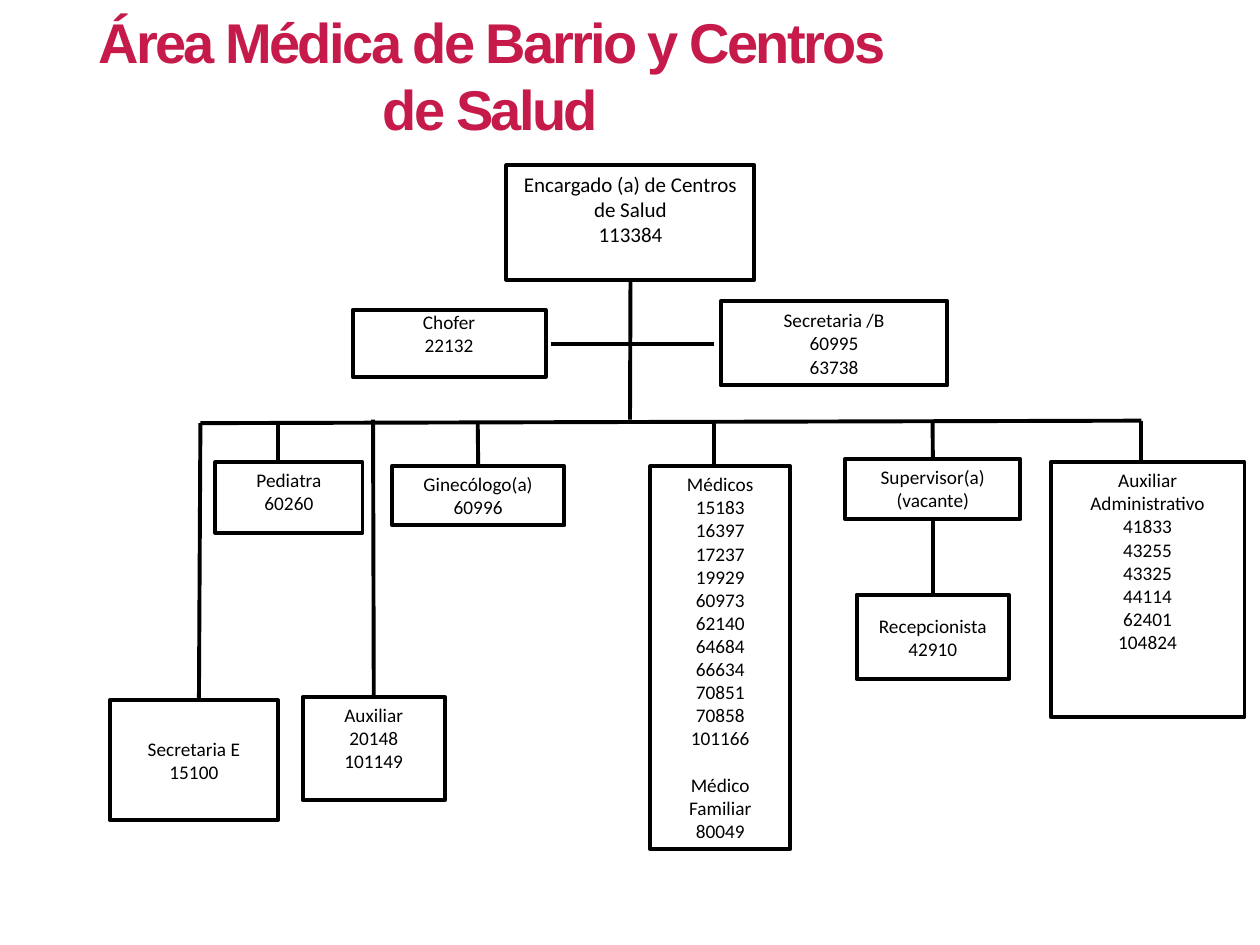
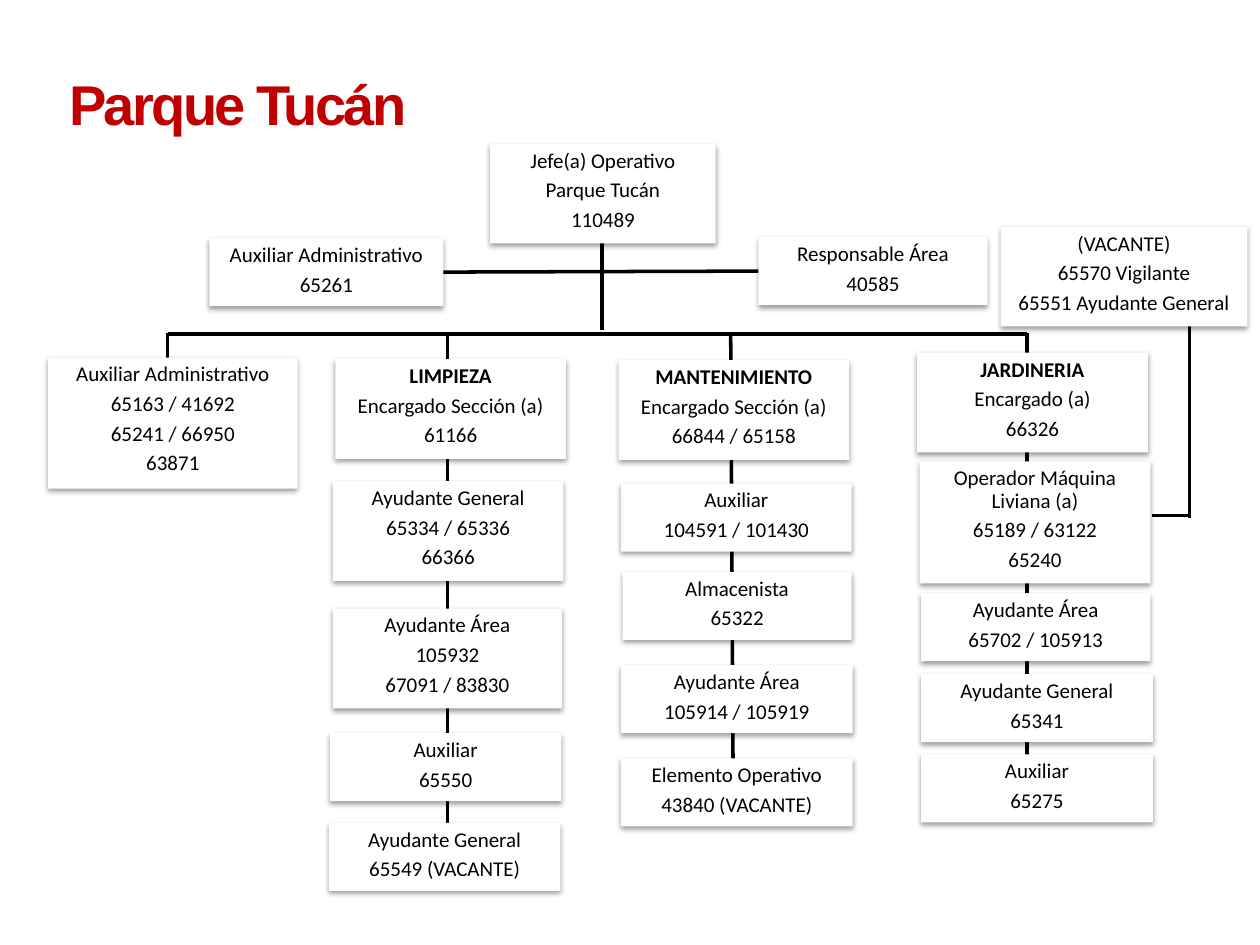
"""Build two organisation charts: neighbourhood health centres and a park."""

from lxml.etree import SubElement
from pptx import Presentation
from pptx.dml.color import RGBColor
from pptx.enum.shapes import MSO_CONNECTOR as Connector
from pptx.enum.shapes import MSO_SHAPE as Preset
from pptx.enum.text import MSO_ANCHOR as Anchor
from pptx.enum.text import MSO_AUTO_SIZE as AutoSize
from pptx.enum.text import PP_ALIGN as Align
from pptx.oxml.ns import qn
from pptx.util import Cm, Pt

COLORS = {
    "crimson": "C51A4A",
    "red": "C00000",
    "black": "000000",
    "white": "FFFFFF",
}
TITLE_FONT = {"name": "Arial", "size": Pt(32), "bold": True}
SECTIONS = ("LIMPIEZA", "MANTENIMIENTO", "JARDINERIA")
TOP, LEFT, BOTTOM, RIGHT = range(4)
CARD_HEIGHTS = {2: 1.37, 3: 2.01, 4: 2.64}
CARD_SPACING = {"line_spacing": 0.9, "space_after": Pt(4)}

HEALTH_BOXES = {
    "head": (10.21, 3.33, 5, 2.31, ["Encargado (a) de Centros de Salud", "113384"]),
    "driver": (7.11, 6.25, 3.89, 1.35, ["Chofer", "22132"]),
    "secretary_b": (14.53, 6.07, 4.57, 1.7, ["Secretaria /B", "60995", "63738"]),
    "pediatrician": (4.34, 9.32, 2.97, 1.42, ["Pediatra", "60260"]),
    "gynecologist": (7.9, 9.4, 3.48, 1.19, ["Ginecólogo(a)", "60996"]),
    "doctors": (13.11, 9.4, 2.82, 7.72, [
        "Médicos", "15183", "16397", "17237", "19929", "60973", "62140",
        "64684", "66634", "70851", "70858", "101166",
        "Médico", "Familiar", "80049"]),
    "supervisor": (17.04, 9.25, 3.53, 1.22, ["Supervisor(a)", "(vacante)"]),
    "receptionist": (17.27, 11.99, 3.07, 1.7, ["Recepcionista", "42910"]),
    "administrative": (21.18, 9.32, 3.91, 5.13, [
        "Auxiliar Administrativo", "41833", "43255", "43325", "44114",
        "62401", "104824"]),
    "secretary_e": (2.21, 14.12, 3.4, 2.41, ["Secretaria E", "15100"]),
    "assistant": (6.1, 14.05, 2.87, 2.08, ["Auxiliar", "20148", "101149"]),
}
MIDDLE_BOXES = ("secretary_b", "receptionist", "secretary_e")
HEALTH_LINES = [
    (5.61, 8.48, 5.61, 9.3),
    (14.4, 8.46, 14.4, 9.4),
    (23.01, 8.48, 23.01, 9.3),
    (12.7, 6.93, 14.4, 6.93),
    (11.1, 6.93, 12.8, 6.93),
    (4.04, 8.53, 23.01, 8.48),
    (4.04, 8.53, 4.01, 14.12),
]
HEALTH_JOINED_LINES = [
    ((12.7, 5.64, 12.7, 8.46), ("head", BOTTOM), None),
    ((9.63, 8.51, 9.63, 9.4), None, ("gynecologist", TOP)),
    ((18.8, 8.48, 18.8, 9.25), None, ("supervisor", TOP)),
    ((7.52, 8.46, 7.52, 14.05), None, ("assistant", TOP)),
    ((18.8, 10.47, 18.8, 11.99), ("supervisor", BOTTOM), ("receptionist", TOP)),
]

PARK_CARDS = {
    "head": (9.88, 2.9, 4.55, ["Jefe(a) Operativo", "Parque Tucán", "110489"]),
    "administrative": (4.22, 4.8, 4.72, ["Auxiliar Administrativo", "65261"]),
    "area_manager": (15.29, 4.78, 4.62, ["Responsable Área", "40585"]),
    "vacant": (20.17, 4.57, 4.98, [
        "(VACANTE)", "65570 Vigilante", "65551 Ayudante General"]),
    "administrative_team": (0.97, 7.21, 5.03, [
        "Auxiliar Administrativo", "65163 / 41692", "65241 / 66950", "63871"]),
    "cleaning": (6.76, 7.24, 4.65, ["LIMPIEZA", "Encargado Sección (a)", "61166"]),
    "cleaning_general": (6.71, 9.7, 4.65, [
        "Ayudante General", "65334 / 65336", "66366"]),
    "cleaning_area": (6.71, 12.27, 4.62, [
        "Ayudante Área", "105932", "67091 / 83830"]),
    "cleaning_assistant": (6.65, 14.78, 4.67, ["Auxiliar", "65550"]),
    "cleaning_vacant": (6.63, 16.59, 4.67, ["Ayudante General", "65549 (VACANTE)"]),
    "maintenance": (12.47, 7.26, 4.65, [
        "MANTENIMIENTO", "Encargado Sección (a)", "66844 / 65158"]),
    "maintenance_assistant": (12.52, 9.75, 4.65, ["Auxiliar", "104591 / 101430"]),
    "storekeeper": (12.55, 11.53, 4.62, ["Almacenista", "65322"]),
    "maintenance_area": (12.52, 13.41, 4.67, ["Ayudante Área", "105914 / 105919"]),
    "operative": (12.52, 15.29, 4.67, ["Elemento Operativo", "43840 (VACANTE)"]),
    "gardening": (18.49, 7.11, 4.65, ["JARDINERIA", "Encargado (a)", "66326"]),
    "machine_operator": (18.54, 9.3, 4.65, [
        "Operador Máquina Liviana (a)", "65189 / 63122", "65240"]),
    "gardening_area": (18.57, 11.96, 4.62, ["Ayudante Área", "65702 / 105913"]),
    "gardening_general": (18.57, 13.59, 4.67, ["Ayudante General", "65341"]),
    "gardening_assistant": (18.57, 15.21, 4.67, ["Auxiliar", "65275"]),
}
PARK_LINES = [
    (9.02, 16.66, 9.02, 6.76),
    (14.78, 15.9, 14.73, 6.76),
    (12.14, 6.65, 12.14, 4.5),
    (3.38, 6.73, 20.7, 6.73),
    (3.38, 7.62, 3.38, 6.71),
    (20.7, 15.21, 20.7, 6.71),
    (23.22, 10.39, 23.98, 10.39),
    (23.98, 10.44, 23.98, 6.12),
]


def color(name):
    """Return the named colour."""
    return RGBColor.from_string(COLORS[name])


def apply_format(target, values):
    """Set each attribute given in a dict of format values."""
    for attribute, value in values.items():
        setattr(target, attribute, value)


def add_title(slide, text, box, color_name, alignment):
    """Place and format the slide title."""
    title = slide.shapes.title
    apply_format(title, dict(zip(("left", "top", "width", "height"), map(Cm, box))))
    frame = title.text_frame
    apply_format(frame, {"word_wrap": True, "auto_size": AutoSize.NONE,
                         "vertical_anchor": Anchor.MIDDLE})
    paragraph = frame.paragraphs[0]
    paragraph.alignment = alignment
    run = paragraph.add_run()
    run.text = text
    apply_format(run.font, TITLE_FONT)
    run.font.color.rgb = color(color_name)
    run.font._element.set("spc", "-150")


def add_box(slide, box, lines, size, anchor=Anchor.TOP, spacing=None):
    """Add a plain rectangle holding centred lines of text."""
    shape = slide.shapes.add_shape(Preset.RECTANGLE, *map(Cm, box))
    shape.shadow.inherit = False
    frame = shape.text_frame
    apply_format(frame, {"word_wrap": True, "vertical_anchor": anchor})
    for index, text in enumerate(lines):
        paragraph = frame.add_paragraph() if index else frame.paragraphs[0]
        apply_format(paragraph, {"alignment": Align.CENTER, **(spacing or {})})
        run = paragraph.add_run()
        run.text = text
        apply_format(run.font, {"name": "Calibri", "size": Pt(size),
                                "bold": text in SECTIONS})
        run.font.color.rgb = color("black")
    return shape


def add_outlined_box(slide, box, lines, size, anchor):
    """Add an unfilled box with a black outline."""
    shape = add_box(slide, box, lines, size, anchor)
    shape.fill.background()
    shape.line.color.rgb = color("black")
    shape.line.width = Pt(2.25)
    return shape


def add_card(slide, box, lines):
    """Add a white card with a soft shadow below it."""
    shape = add_box(slide, box, lines, 12, spacing=CARD_SPACING)
    shape.fill.solid()
    shape.fill.fore_color.rgb = color("white")
    shape.line.fill.background()
    effects = shape._element.spPr.find(qn("a:effectLst"))
    shadow = SubElement(effects, qn("a:outerShdw"), blurRad=str(Pt(3.1)),
                        dist=str(Pt(1.6)), dir="5400000", rotWithShape="0")
    shade = SubElement(shadow, qn("a:srgbClr"), val=COLORS["black"])
    SubElement(shade, qn("a:alpha"), val="38000")
    return shape


def add_line(slide, ends, width):
    """Add a straight black line."""
    line = slide.shapes.add_connector(Connector.STRAIGHT, *map(Cm, ends))
    line.line.color.rgb = color("black")
    line.line.width = Pt(width)
    SubElement(line._element.spPr, qn("a:effectLst"))
    return line


def add_joined_line(slide, ends, width, shapes, begin, end):
    """Add a line joined to the middle of the sides of boxes."""
    line = add_line(slide, ends, width)
    if begin:
        line.begin_connect(shapes[begin[0]], begin[1])
    if end:
        line.end_connect(shapes[end[0]], end[1])


def build_health_slide(slide):
    """Draw the chart of the health centres."""
    add_title(slide, "Área Médica de Barrio y Centros de Salud",
              (1.24, 0, 17.3, 3), "crimson", Align.CENTER)
    for ends in HEALTH_LINES:
        add_line(slide, ends, 2.25)
    shapes = {}
    for name, (*box, lines) in HEALTH_BOXES.items():
        anchor = Anchor.MIDDLE if name in MIDDLE_BOXES else Anchor.TOP
        size = 12 if name == "head" else 11
        shapes[name] = add_outlined_box(slide, box, lines, size, anchor)
    shapes["driver"].text_frame.margin_top = 0
    family_doctor = shapes["doctors"].text_frame.paragraphs[-3]
    family_doctor.space_before = Pt(13.4)
    for ends, begin, end in HEALTH_JOINED_LINES:
        add_joined_line(slide, ends, 2.25, shapes, begin, end)


def build_park_slide(slide):
    """Draw the chart of the park."""
    add_title(slide, "Parque Tucán", (1.14, 1.27, 8.99, 1.63), "red", Align.LEFT)
    for ends in PARK_LINES:
        add_line(slide, ends, 2)
    shapes = {}
    for name, (left, top, width, lines) in PARK_CARDS.items():
        height = 2.46 if name == "machine_operator" else CARD_HEIGHTS[len(lines)]
        shapes[name] = add_card(slide, (left, top, width, height), lines)
    add_joined_line(slide, (8.94, 5.46, 15.29, 5.46), 2, shapes,
                    ("administrative", RIGHT), ("area_manager", LEFT))


def main():
    """Build and save the presentation."""
    presentation = Presentation()
    presentation.slide_width = Cm(25.4)
    presentation.slide_height = Cm(19.05)
    for build in (build_health_slide, build_park_slide):
        build(presentation.slides.add_slide(presentation.slide_layouts[5]))
    presentation.save("out.pptx")


if __name__ == "__main__":
    main()
